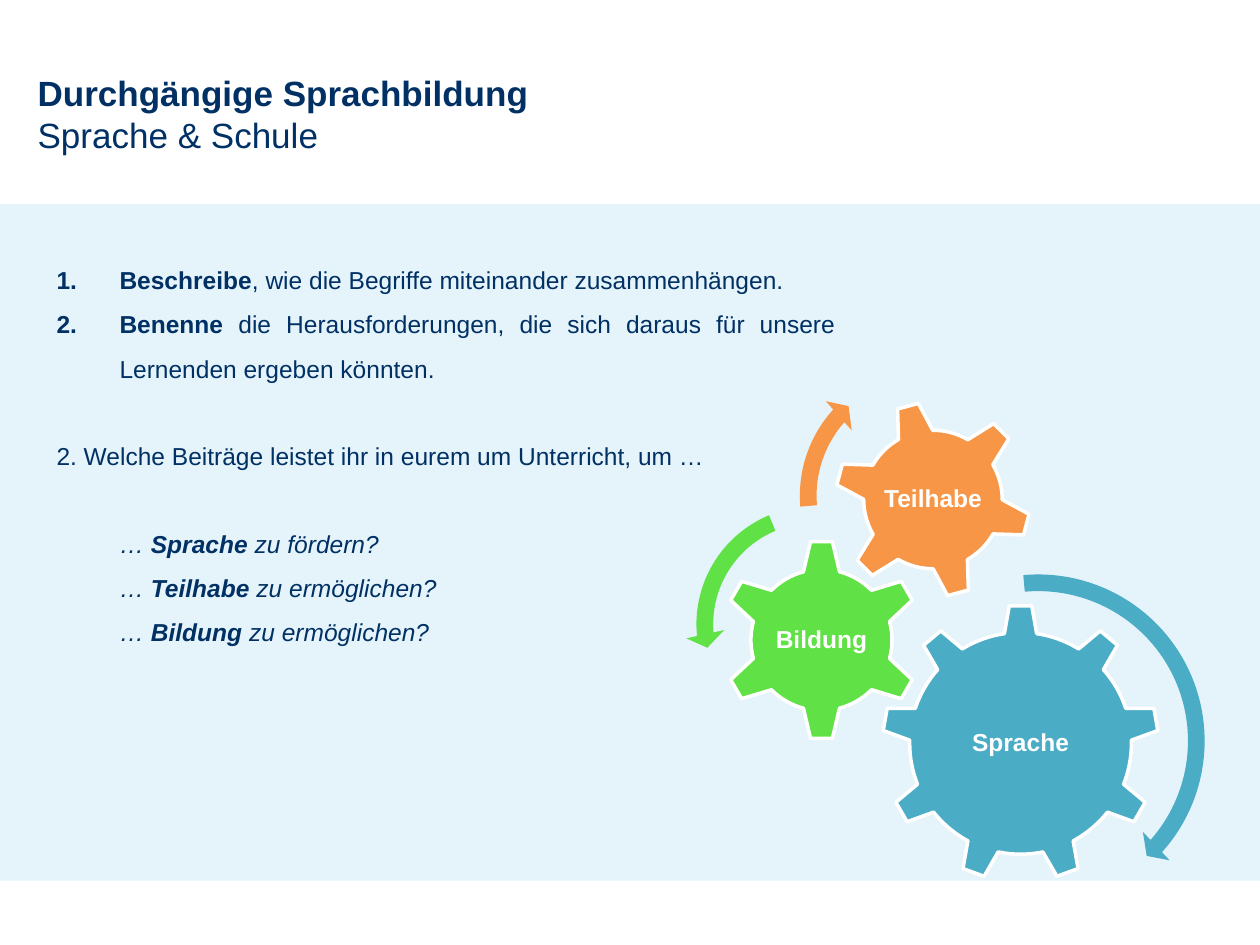
"""Build the slide on language, participation and education as three gears."""
from lxml.etree import SubElement
from pptx import Presentation
from pptx.dml.color import RGBColor
from pptx.enum.shapes import MSO_SHAPE
from pptx.enum.text import MSO_ANCHOR, MSO_AUTO_SIZE, PP_ALIGN
from pptx.oxml.ns import qn
from pptx.util import Inches, Pt

NAVY = RGBColor(0x00, 0x30, 0x64)
SKY = RGBColor(0x00, 0x8C, 0xCF)
WHITE = RGBColor(0xFF, 0xFF, 0xFF)
TEAL = RGBColor(0x4B, 0xAC, 0xC6)
GREEN = RGBColor(0x60, 0xE1, 0x46)
ORANGE = RGBColor(0xF7, 0x96, 0x46)

TITLE = [("Durchgängige Sprachbildung", True), ("Sprache & Schule", False)]
TASKS = [
    ("Beschreibe", ", wie die Begriffe miteinander zusammenhängen."),
    ("Benenne", " die Herausforderungen, die sich daraus für unsere Lernenden ergeben könnten."),
]
QUERY = "2. Welche Beiträge leistet ihr in eurem um Unterricht, um …"
GOALS = [
    ("Sprache", " zu fördern?"),
    ("Teilhabe", " zu ermöglichen?"),
    ("Bildung", " zu ermöglichen?"),
]
GEARS = [
    ("Sprache", MSO_SHAPE.GEAR_9, TEAL, (7, 4.8, 2.2), 0, (1.32, 1.13)),
    ("Bildung", MSO_SHAPE.GEAR_6, GREEN, (5.72, 4.28, 1.6), 0, (0.8, 0.79)),
    ("Teilhabe", MSO_SHAPE.GEAR_6, ORANGE, (6.62, 3.18, 1.57), 345, (0.88, 0.88)),
]
ARROWS = [
    (MSO_SHAPE.CIRCULAR_ARROW, TEAL, (6.83, 4.47, 2.82),
     (4.7, 299, 2502.2, 15891.7, 5.5)),
    (MSO_SHAPE.LEFT_CIRCULAR_ARROW, GREEN, (5.44, 3.93, 2.05),
     (6.5, 430, 10489.1, 14837.8, 7.5)),
    (MSO_SHAPE.CIRCULAR_ARROW, ORANGE, (6.26, 2.83, 2.21),
     (6, 394.1, 13313.8, 10508.2, 7)),
]
GAP = 25


def add_run(para, text, size=14, color=NAVY, bold=False, slant=False):
    run = para.add_run()
    run.text = text
    font = run.font
    font.name, font.size = "Arial", Pt(size)
    font.bold, font.italic = bold, slant
    font.color.rgb = color


def add_form(parent, kind, box, color):
    form = parent.add_shape(kind, *map(Inches, box))
    form.shadow.inherit = False
    form.fill.solid()
    form.fill.fore_color.rgb = color
    form.line.fill.background()
    return form


def add_box(parent, box):
    frame = parent.add_textbox(*map(Inches, box)).text_frame
    frame.word_wrap = True
    return frame


def next_para(frame):
    first = frame.paragraphs[0]
    return frame.add_paragraph() if first.runs else first


def body_para(frame, left=0, hang=0, before=0):
    para = next_para(frame)
    para.alignment, para.line_spacing = PP_ALIGN.JUSTIFY, 1.5
    if before:
        para.space_before = Pt(before)
    props = para._p.get_or_add_pPr()
    props.set("marL", str(Inches(left)))
    props.set("indent", str(-Inches(hang)))
    if hang:
        SubElement(props, qn("a:buAutoNum"), type="arabicPeriod")
    return para


def add_gear(group, name, kind, color, place, turn, size):
    left, top, side = place
    gear = add_form(group, kind, (left, top, side, side), color)
    gear.rotation = turn
    gear.line.color.rgb, gear.line.width = WHITE, Pt(2)
    wide, high = size
    frame = add_box(group, (left + (side - wide) / 2, top + (side - high) / 2, wide, high))
    frame.vertical_anchor = MSO_ANCHOR.MIDDLE
    frame.margin_left = frame.margin_right = Inches(0.02)
    frame.margin_top = frame.margin_bottom = Inches(0.02)
    para = frame.paragraphs[0]
    para.alignment, para.line_spacing = PP_ALIGN.CENTER, 0.9
    add_run(para, name, color=WHITE, bold=True)


def add_arrow(group, kind, color, place, bends):
    left, top, side = place
    arrow = add_form(group, kind, (left, top, side, side), color)
    for i, bend in enumerate(bends):
        arrow.adjustments[i] = bend / 100


def main():
    deck = Presentation()
    deck.slide_width, deck.slide_height = Inches(10), Inches(7.5)
    shapes = deck.slides.add_slide(deck.slide_layouts[6]).shapes

    band = add_form(shapes, MSO_SHAPE.RECTANGLE, (0, 1.62, 10, 5.37), SKY)
    tint = band._element.spPr.find(qn("a:solidFill"))[0]
    SubElement(tint, qn("a:alpha"), val="10000")

    head = add_box(shapes, (0.2, 0.52, 6.38, 0.77))
    head.auto_size = MSO_AUTO_SIZE.SHAPE_TO_FIT_TEXT
    for text, bold in TITLE:
        add_run(next_para(head), text, size=20, bold=bold)

    group = shapes.add_group_shape().shapes
    for gear in GEARS:
        add_gear(group, *gear)
    for arrow in ARROWS:
        add_arrow(group, *arrow)

    body = add_box(shapes, (0.35, 1.94, 6.38, 3.24))
    body.auto_size = MSO_AUTO_SIZE.SHAPE_TO_FIT_TEXT
    for verb, rest in TASKS:
        para = body_para(body, left=0.5, hang=0.5)
        add_run(para, verb, bold=True)
        add_run(para, rest)
    add_run(body_para(body, before=GAP), QUERY)
    for i, (noun, rest) in enumerate(GOALS):
        para = body_para(body, left=0.5, before=0 if i else GAP)
        add_run(para, "… ", slant=True)
        add_run(para, noun, bold=True, slant=True)
        add_run(para, rest, slant=True)

    deck.save("out.pptx")


if __name__ == "__main__":
    main()
